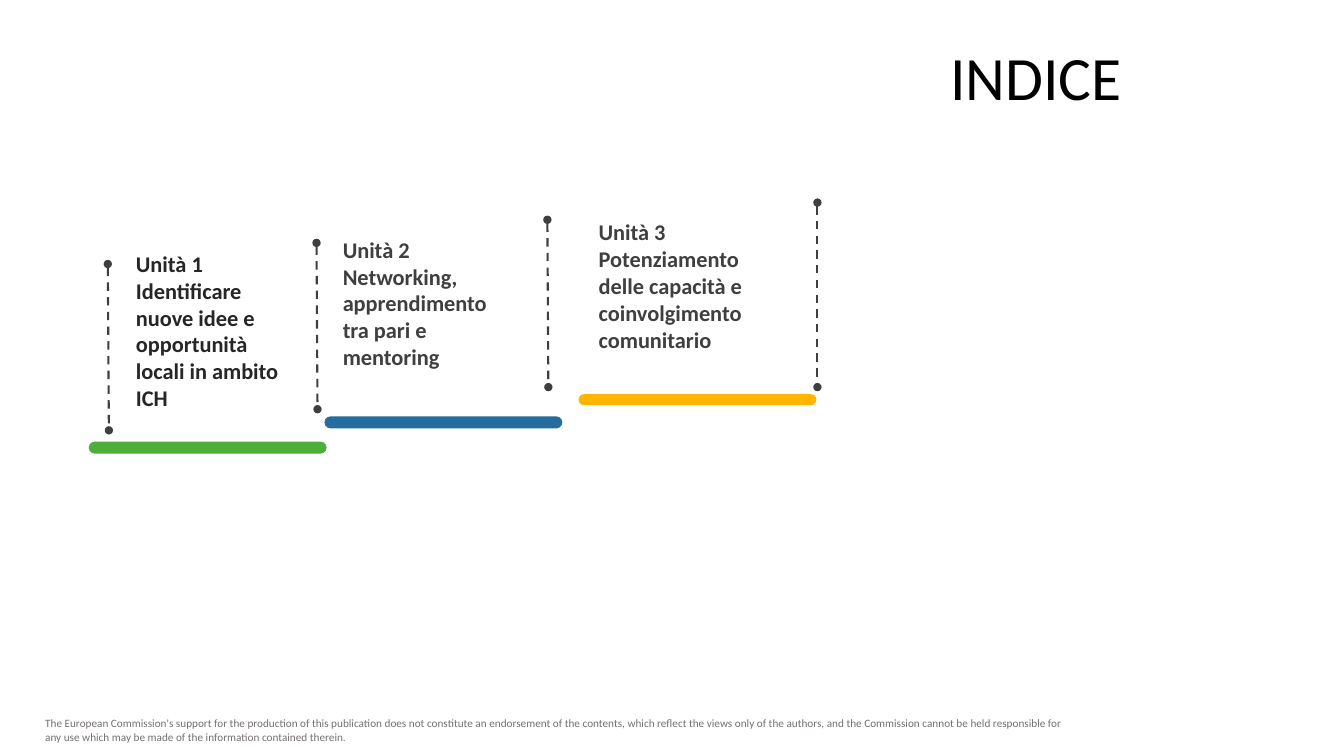
import pptx
import pptx.dml.color
import pptx.enum.dml
import pptx.enum.shapes
import pptx.enum.text
import pptx.oxml
import pptx.oxml.ns
import pptx.util

Pt = pptx.util.Pt
RGBColor = pptx.dml.color.RGBColor

BLACK = RGBColor(0x00, 0x00, 0x00)
INK = RGBColor(0x26, 0x26, 0x26)
CHARCOAL = RGBColor(0x3F, 0x3F, 0x3F)
GREY = RGBColor(0x75, 0x70, 0x70)
GREEN = RGBColor(0x4E, 0xAE, 0x3A)
BLUE = RGBColor(0x26, 0x6C, 0x9F)
YELLOW = RGBColor(0xFF, 0xB5, 0x00)

BAR_WIDTH = 169.9

DISCLAIMER = (
    "The European Commission's support for the production of this publication does not "
    "constitute an endorsement of the contents, which reflect the views only of the authors, "
    "and the Commission cannot be held responsible for any use which may be made of the "
    "information contained therein."
)

# heading, topic, text colour, text box, side inset, bar colour, bar left, top, height
UNITS = [
    ("Unità 1", "Identificare nuove idee e opportunità locali in ambito ICH",
     INK, (90, 175, 123.1, 123.8), 7.2, GREEN, (63.4, 315.4, 8.6)),
    ("Unità 2", "Networking, apprendimento tra pari e mentoring",
     CHARCOAL, (236.2, 164.9, 127.4, 104.4), 8.64, BLUE, (231.8, 297.4, 8.6)),
    ("Unità 3", "Potenziamento delle capacità e coinvolgimento comunitario",
     CHARCOAL, (419, 152.6, 141.8, 104.4), 8.64, YELLOW, (413.3, 281.5, 7.9)),
]

DIVIDERS = [
    (77, 188.6, 77.8, 307.4),
    (226.1, 173.5, 226.8, 292.3),
    (391, 157, 391.7, 276.5),
    (583.9, 144.7, 583.9, 276.5),
]


class IndexPage:
    font_name = "Calibri"

    def __init__(self, deck):
        self.page = deck.slides.add_slide(deck.slide_layouts[5])

    def style(self, para, size, color, bold=False):
        para.font.name = self.font_name
        para.font.size = Pt(size)
        para.font.bold = bold
        para.font.color.rgb = color

    def title(self, text, left, top, width, height):
        box = self.page.shapes.title
        box.left, box.top, box.width, box.height = map(Pt, (left, top, width, height))
        frame = box.text_frame
        frame.text = text
        frame.auto_size = pptx.enum.text.MSO_AUTO_SIZE.NONE
        frame.vertical_anchor = pptx.enum.text.MSO_ANCHOR.MIDDLE
        para = frame.paragraphs[0]
        para.alignment = pptx.enum.text.PP_ALIGN.RIGHT
        para.line_spacing = 0.9
        self.style(para, 44, BLACK)

    def text(self, lines, bounds, size, color, bold=False, inset=7.2):
        frame = self.page.shapes.add_textbox(*map(Pt, bounds)).text_frame
        frame.word_wrap = True
        frame.auto_size = pptx.enum.text.MSO_AUTO_SIZE.SHAPE_TO_FIT_TEXT
        frame.margin_left = frame.margin_right = Pt(inset)
        frame.text = "\n".join(lines)
        for para in frame.paragraphs:
            self.style(para, size, color, bold)

    def bar(self, color, left, top, height):
        bar = self.page.shapes.add_shape(
            pptx.enum.shapes.MSO_SHAPE.ROUNDED_RECTANGLE,
            Pt(left), Pt(top), Pt(BAR_WIDTH), Pt(height))
        bar.adjustments[0] = 0.5
        bar.shadow.inherit = False
        bar.fill.solid()
        bar.fill.fore_color.rgb = color
        bar.line.fill.background()

    def divider(self, *ends):
        """Draw a dashed line with a dot at each end."""
        divider = self.page.shapes.add_connector(
            pptx.enum.shapes.MSO_CONNECTOR.STRAIGHT, *map(Pt, ends))
        divider.line.color.rgb = CHARCOAL
        divider.line.width = Pt(1.5)
        divider.line.dash_style = pptx.enum.dml.MSO_LINE.DASH
        properties = divider.element.spPr
        outline = properties.find(pptx.oxml.ns.qn("a:ln"))
        for tag in ("a:headEnd", "a:tailEnd"):
            dot = pptx.oxml.xmlchemy.OxmlElement(tag)
            dot.set("type", "oval")
            outline.append(dot)
        properties.append(pptx.oxml.xmlchemy.OxmlElement("a:effectLst"))


def main():
    deck = pptx.Presentation()
    deck.slide_width, deck.slide_height = Pt(960), Pt(540)
    index = IndexPage(deck)
    index.text([DISCLAIMER], (25.2, 508.3, 753.1, 26.6), 8, GREY)
    index.title("INDICE", 188.6, 28.8, 619.9, 56.9)
    for heading, topic, color, bounds, inset, bar_color, bar_place in UNITS:
        index.bar(bar_color, *bar_place)
        index.text([heading, topic], bounds, 16, color, bold=True, inset=inset)
    for ends in DIVIDERS:
        index.divider(*ends)
    deck.save("out.pptx")


if __name__ == "__main__":
    main()
